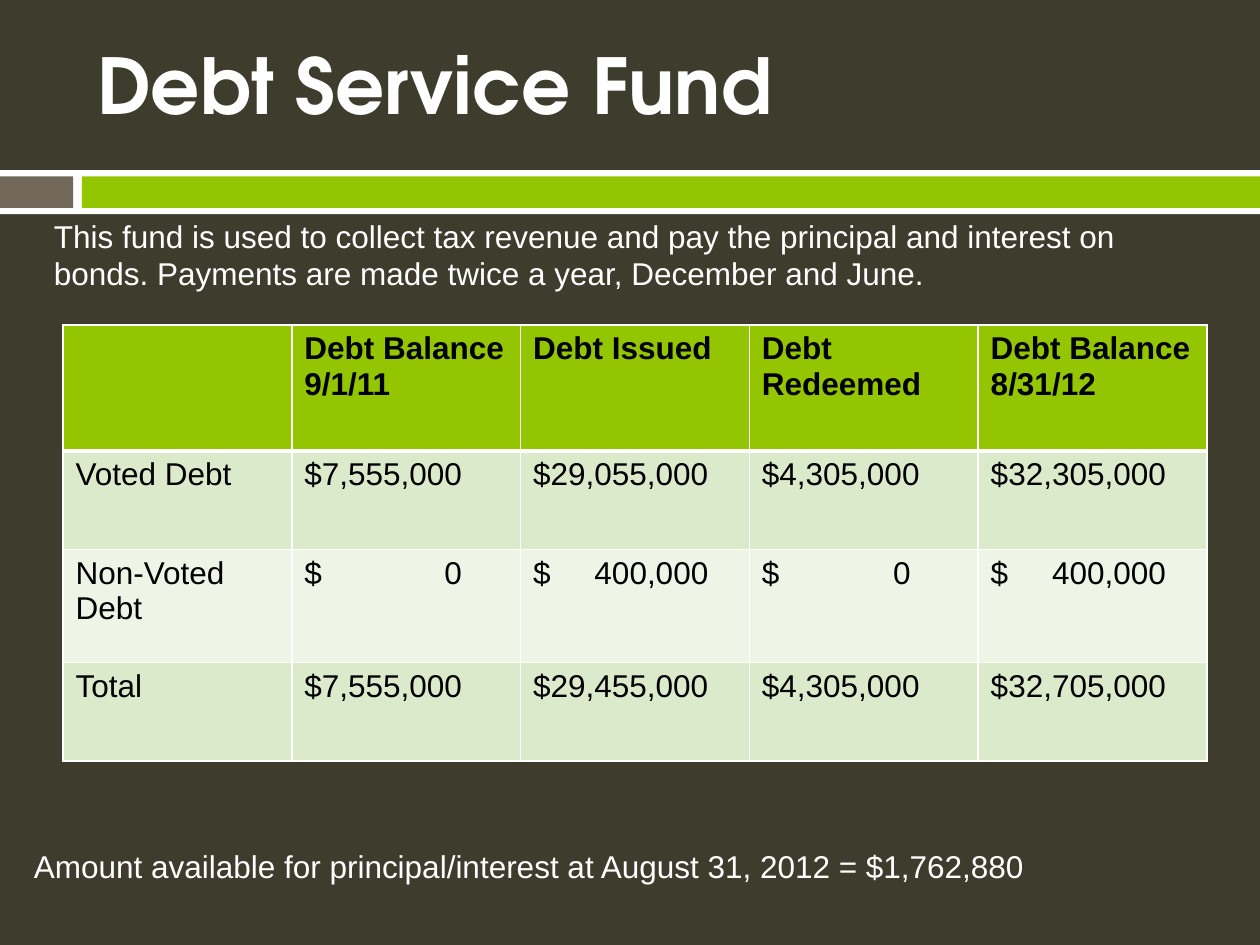
from lxml import etree
from pptx import Presentation
from pptx.dml.color import RGBColor
from pptx.enum.shapes import MSO_SHAPE
from pptx.enum.text import MSO_ANCHOR, PP_ALIGN
from pptx.oxml import parse_xml
from pptx.oxml.ns import nsdecls, qn
from pptx.util import Inches, Pt

RECTANGLE = MSO_SHAPE.RECTANGLE
MIDDLE = MSO_ANCHOR.MIDDLE
LEFT = PP_ALIGN.LEFT

DARK = RGBColor(0x3E, 0x3D, 0x2D)
GREEN = RGBColor(0x94, 0xC6, 0x00)
TAUPE = RGBColor(0x71, 0x68, 0x5A)
WHITE = RGBColor(0xFF, 0xFF, 0xFF)
BLACK = RGBColor(0x00, 0x00, 0x00)
BAND_DARK = RGBColor(0xDC, 0xEA, 0xCC)
BAND_LIGHT = RGBColor(0xEE, 0xF5, 0xE7)


def write_text(text_frame, text, size=18, font="Arial", color=WHITE, bold=False):
    text_frame.word_wrap = True
    paragraph = text_frame.paragraphs[0]
    paragraph.alignment = LEFT
    run = paragraph.add_run()
    run.text = text
    run.font.size = Pt(size)
    run.font.name = font
    run.font.color.rgb = color
    run.font.bold = bold
    return paragraph


def add_border(cell, side, width):
    properties = cell._tc.get_or_add_tcPr()
    properties.append(parse_xml(
        f'<a:{side} {nsdecls("a")} w="{Pt(width)}"><a:solidFill>'
        f'<a:srgbClr val="{WHITE}"/></a:solidFill></a:{side}>'))


presentation = Presentation()
presentation.slide_width = Inches(10)
presentation.slide_height = Inches(7.5)
slide = presentation.slides.add_slide(presentation.slide_layouts[5])
slide.background.fill.solid()
slide.background.fill.fore_color.rgb = DARK

# Divider band under the title
for left, top, width, height, color in [
    (0, 1.35, 10, 0.35, WHITE),
    (0, 1.4, 0.58, 0.25, TAUPE),
    (0.65, 1.4, 9.35, 0.25, GREEN),
]:
    shape = slide.shapes.add_shape(
        RECTANGLE, Inches(left), Inches(top), Inches(width), Inches(height))
    shape.shadow.inherit = False
    shape.fill.solid()
    shape.fill.fore_color.rgb = color
    shape.line.fill.background()

# Title
title = slide.shapes.title
title.left, title.top = Inches(0.67), Inches(0)
title.width, title.height = Inches(8.67), Inches(1.33)
title.text_frame.vertical_anchor = MIDDLE
write_text(title.text_frame, "Debt Service Fund",
           size=44, font="TeX Gyre Adventor", bold=True)

# Introduction and closing line
for left, top, height, text in [
    (0.33, 1.67, 0.71,
     "This fund is used to collect tax revenue and pay the principal and "
     "interest on bonds. Payments are made twice a year, December and June."),
    (0.17, 6.67, 0.4,
     "Amount available for principal/interest at August 31, 2012 = $1,762,880"),
]:
    text_box = slide.shapes.add_textbox(
        Inches(left), Inches(top), Inches(9.33), Inches(height))
    write_text(text_box.text_frame, text)

# Debt table: a tab separates the dollar sign from a right-aligned amount
rows = [
    ["", "Debt Balance 9/1/11", "Debt Issued", "Debt Redeemed", "Debt Balance 8/31/12"],
    ["Voted Debt", "$7,555,000", "$29,055,000", "$4,305,000", "$32,305,000"],
    ["Non-Voted Debt", "$\t0", "$\t400,000", "$\t0", "$\t400,000"],
    ["Total", "$7,555,000", "$29,455,000", "$4,305,000", "$32,705,000"],
]
row_heights = [1, 0.78, 0.9, 0.78]
row_fills = [GREEN, BAND_DARK, BAND_LIGHT, BAND_DARK]
amount_ends = [0, 1.25, 1.39, 1.18, 1.39]

table = slide.shapes.add_table(
    len(rows), len(rows[0]), Inches(0.5), Inches(2.58),
    Inches(9.08), Inches(sum(row_heights))).table
for column in table.columns:
    column.width = Inches(9.08 / len(rows[0]))

for row_index, row in enumerate(rows):
    table.rows[row_index].height = Inches(row_heights[row_index])
    border_widths = {
        "lnL": 1,
        "lnR": 1,
        "lnT": 3 if row_index == 1 else 1,
        "lnB": 3 if row_index == 0 else 1,
    }
    for column_index, text in enumerate(row):
        cell = table.cell(row_index, column_index)
        for side, width in border_widths.items():
            add_border(cell, side, width)
        cell.fill.solid()
        cell.fill.fore_color.rgb = row_fills[row_index]
        if not text:
            continue
        paragraph = write_text(cell.text_frame, text, color=BLACK,
                               bold=row_index == 0)
        if "\t" in text:
            tab_list = etree.SubElement(
                paragraph._p.get_or_add_pPr(), qn("a:tabLst"))
            etree.SubElement(tab_list, qn("a:tab"), algn="r",
                             pos=str(Inches(amount_ends[column_index])))

presentation.save("out.pptx")
